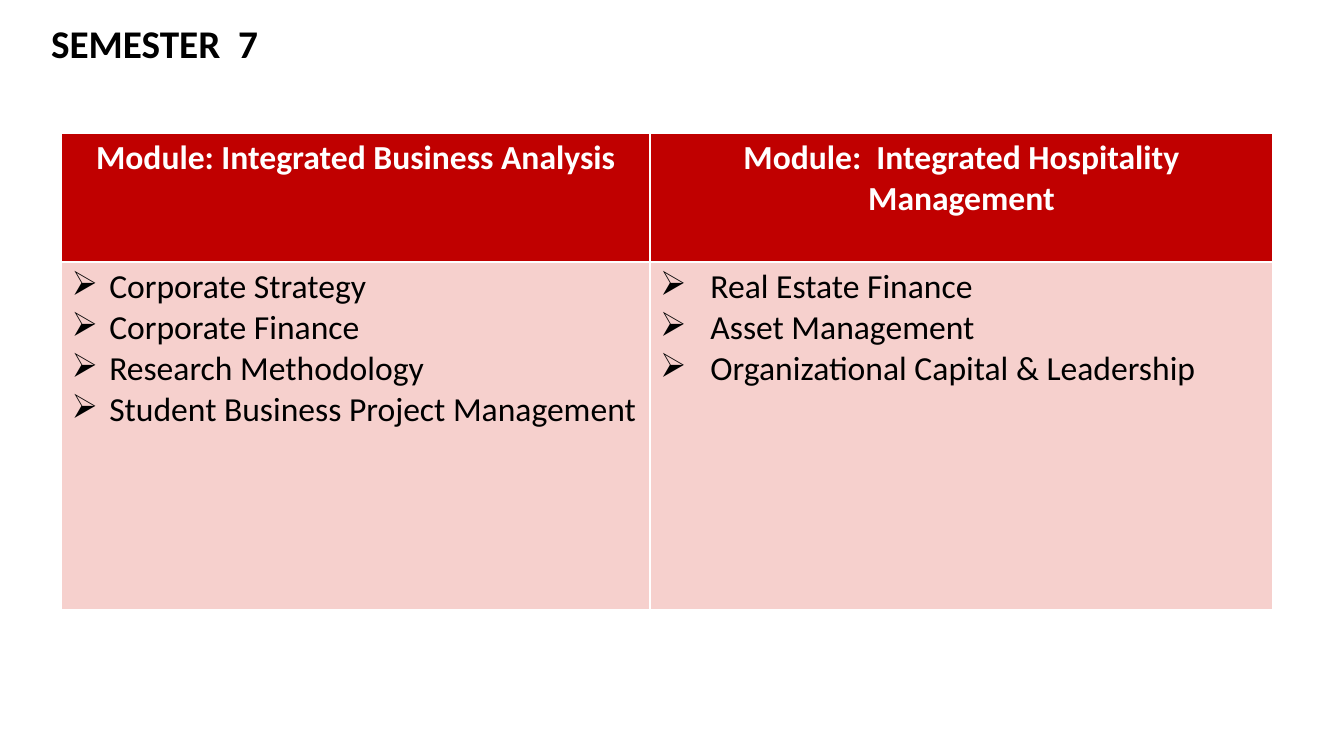
from dataclasses import dataclass

from lxml import etree
from pptx import Presentation
from pptx import util as u
from pptx.dml import color
from pptx.enum import text
from pptx.oxml import ns

RED, PINK, BLACK, WHITE = "C00000", "F6D0CD", "000000", "FFFFFF"
FONT = "Calibri"


@dataclass
class Module:
    name: str
    topics: list[str]
    width: float
    indent: float


MODULES = [
    Module("Module: Integrated Business Analysis",
           ["Corporate Strategy", "Corporate Finance", "Research Methodology",
            "Student Business Project Management"], 14.83, 0.95),
    Module("Module:  Integrated Hospitality Management",
           ["Real Estate Finance", "Asset Management",
            "Organizational Capital & Leadership"], 15.7, 1.27),
]
ROWS = [3.25, 8.76]


def rgb(code: str) -> color.RGBColor:
    return color.RGBColor.from_string(code)


def bullet(para, indent: float) -> None:
    props = para._p.get_or_add_pPr()
    props.set("marL", str(u.Cm(indent)))
    props.set("indent", str(-u.Cm(indent)))
    etree.SubElement(props, ns.qn("a:buChar")).set("char", "➢")


def write(frame, lines: list[str], size: int = 24, ink: str = BLACK,
          bold: bool = False, align=text.PP_ALIGN.LEFT, indent: float = 0) -> None:
    for i, line in enumerate(lines):
        para = frame.add_paragraph() if i else frame.paragraphs[0]
        para.alignment = align
        if indent:
            bullet(para, indent)
        run = para.add_run()
        run.text = line
        run.font.name, run.font.size, run.font.bold = FONT, u.Pt(size), bold
        run.font.color.rgb = rgb(ink)


def paint(cell, code: str) -> None:
    cell.fill.solid()
    cell.fill.fore_color.rgb = rgb(code)


def main() -> None:
    deck = Presentation()
    deck.slide_width, deck.slide_height = u.Cm(33.87), u.Cm(19.05)
    slide = deck.slides.add_slide(deck.slide_layouts[6])

    # Title
    title = slide.shapes.add_textbox(u.Cm(1.04), u.Cm(0.36), u.Cm(10.77), u.Cm(1.45))
    title.text_frame.word_wrap = True
    write(title.text_frame, ["SEMESTER  7"], size=28, bold=True)

    # Table: the default style gives the white rules
    width = sum(m.width for m in MODULES)
    table = slide.shapes.add_table(len(ROWS), len(MODULES), u.Cm(1.55), u.Cm(3.35),
                                   u.Cm(width), u.Cm(sum(ROWS))).table
    for row, height in zip(table.rows, ROWS):
        row.height = u.Cm(height)

    # One column for each module
    for col, module in enumerate(MODULES):
        table.columns[col].width = u.Cm(module.width)
        head, body = table.cell(0, col), table.cell(1, col)
        paint(head, RED)
        paint(body, PINK)
        write(head.text_frame, [module.name], ink=WHITE, bold=True,
              align=text.PP_ALIGN.CENTER)
        write(body.text_frame, module.topics, indent=module.indent)

    deck.save("out.pptx")


if __name__ == "__main__":
    main()
